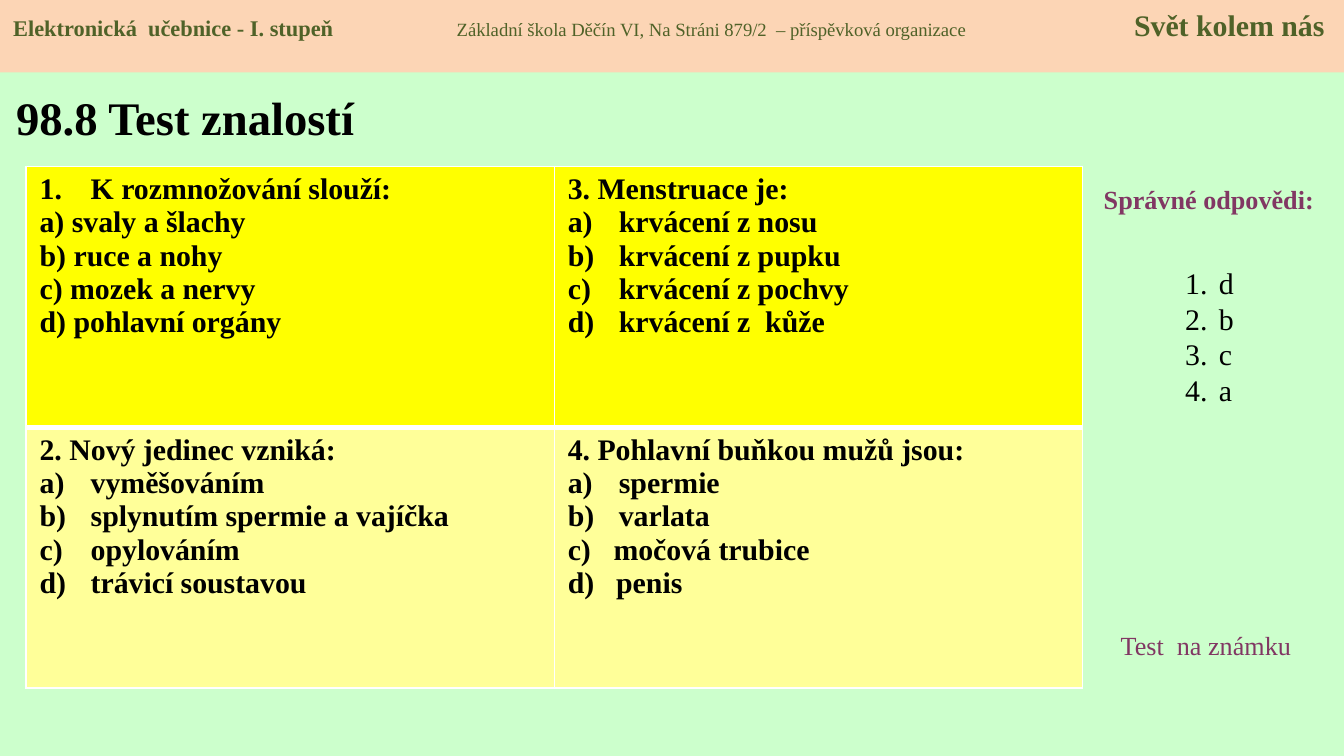
"""Builds the quiz slide "98.8 Test znalostí" with its questions and answers."""
from lxml import etree
from pptx import Presentation
from pptx import util as u
from pptx.dml.color import RGBColor
from pptx.enum import shapes, text
from pptx.oxml import ns

MINT = RGBColor(0xCC, 0xFF, 0xCC)
PEACH = RGBColor(0xFC, 0xD5, 0xB5)
OLIVE = RGBColor(0x4F, 0x62, 0x28)
PLUM = RGBColor(0x81, 0x37, 0x63)
BLACK = RGBColor(0, 0, 0)
WHITE = RGBColor(0xFF, 0xFF, 0xFF)
YELLOW = RGBColor(0xFF, 0xFF, 0)
PALE_YELLOW = RGBColor(0xFF, 0xFF, 0x99)
FONT = "Times New Roman"
LETTERS, NUMBERS = "alphaLcParenR", "arabicPeriod"

presentation = Presentation()
presentation.slide_width = u.Inches(10)
presentation.slide_height = presentation.slide_width * 9 // 16
slide = presentation.slides.add_slide(presentation.slide_layouts[5])
slide.background.fill.solid()
slide.background.fill.fore_color.rgb = MINT


def area(left, top, width, height):
    """Turns percentages of the slide into left, top, width and height."""
    across, down = presentation.slide_width / 100, presentation.slide_height / 100
    return int(left * across), int(top * down), int(width * across), int(height * down)


def write(paragraph, wording, size, color, bold=False, numbering=None, indent=0):
    """Fills and formats a paragraph, with a hanging indent if one is given."""
    paragraph.text = wording
    font = paragraph.font
    font.name, font.size, font.bold = FONT, u.Pt(size), bold
    font.color.rgb = color
    properties = paragraph._p.get_or_add_pPr()
    if indent:
        properties.set("marL", str(u.Inches(indent)))
        properties.set("indent", str(-u.Inches(indent)))
    if numbering:
        bullet = etree.Element(ns.qn("a:buAutoNum"), type=numbering)
        properties.insert(0, bullet)


title = slide.shapes.title
title.left, title.top, title.width, title.height = area(0.2, 9.7, 31.9, 11.6)
title.text_frame.vertical_anchor = text.MSO_ANCHOR.MIDDLE
write(title.text_frame.paragraphs[0], "98.8 Test znalostí", 25, BLACK, True)
title.text_frame.paragraphs[0].alignment = text.PP_ALIGN.LEFT

questions = [
    [
        [("K rozmnožování slouží:", NUMBERS, 0.38), ("a) svaly a šlachy", None, 0),
         ("b) ruce a nohy", None, 0), ("c) mozek a nervy", None, 0),
         ("d) pohlavní orgány", None, 0)],
        [("3. Menstruace je:", None, 0.38), ("krvácení z nosu", LETTERS, 0.38),
         ("krvácení z pupku", LETTERS, 0.38), ("krvácení z pochvy", LETTERS, 0.38),
         ("krvácení z  kůže", LETTERS, 0.38)],
    ],
    [
        [("2. Nový jedinec vzniká:", None, 0.38), ("vyměšováním", LETTERS, 0.38),
         ("splynutím spermie a vajíčka", LETTERS, 0.38), ("opylováním", LETTERS, 0.38),
         ("trávicí soustavou", LETTERS, 0.38)],
        [("4. Pohlavní buňkou mužů jsou:", None, 0), ("spermie", LETTERS, 0.38),
         ("varlata", LETTERS, 0.38), ("c)\tmočová trubice", None, 0.34),
         ("d)\tpenis", None, 0.36)],
    ],
]
table = slide.shapes.add_table(2, 2, *area(1.95, 22, 78.6, 69)).table
row_styles = ((YELLOW, "a:lnB"), (PALE_YELLOW, "a:lnT"))
for row, (cells, (color, inner_edge)) in enumerate(zip(questions, row_styles)):
    for column, lines in enumerate(cells):
        cell = table.cell(row, column)
        cell.fill.solid()
        cell.fill.fore_color.rgb = color
        border = etree.Element(ns.qn(inner_edge), w=str(u.Pt(3)))
        border_fill = etree.SubElement(border, ns.qn("a:solidFill"))
        etree.SubElement(border_fill, ns.qn("a:srgbClr"), val=str(WHITE))
        cell._tc.get_or_add_tcPr().insert(0, border)
        for number, (wording, numbering, indent) in enumerate(lines):
            frame = cell.text_frame
            paragraph = frame.add_paragraph() if number else frame.paragraphs[0]
            write(paragraph, wording, 16, BLACK, True, numbering, indent)

labels = [
    ("Správné odpovědi:", area(80.5, 23.4, 18.9, 6), True, text.PP_ALIGN.CENTER),
    ("Test  na známku", area(82.4, 82.4, 15.7, 6), False, text.PP_ALIGN.LEFT),
]
for wording, place, bold, alignment in labels:
    label = slide.shapes.add_textbox(*place)
    label.text_frame.word_wrap = True
    write(label.text_frame.paragraphs[0], wording, 14, PLUM, bold)
    label.text_frame.paragraphs[0].alignment = alignment

answers = slide.shapes.add_textbox(*area(87.2, 29.4, 5.5, 35.4)).text_frame
answers.word_wrap = True
answers.margin_top = u.Inches(0.32)
for number, answer in enumerate("dbca"):
    paragraph = answers.add_paragraph() if number else answers.paragraphs[0]
    write(paragraph, answer, 16, BLACK, False, NUMBERS, 0.25)
    paragraph.line_spacing = u.Pt(19)

header = slide.shapes.add_shape(shapes.MSO_SHAPE.RECTANGLE, *area(0, 0, 100, 9.6))
header.shadow.inherit = False
header.fill.solid()
header.fill.fore_color.rgb = PEACH
header.line.fill.background()
header.text_frame.vertical_anchor = text.MSO_ANCHOR.TOP
paragraph = header.text_frame.paragraphs[0]
write(paragraph, "", 12, OLIVE)
paragraph.alignment = text.PP_ALIGN.LEFT
stops = etree.Element(ns.qn("a:tabLst"))
for position in (3.3, 8.34):
    etree.SubElement(stops, ns.qn("a:tab"), pos=str(u.Inches(position)), algn="l")
paragraph._p.get_or_add_pPr().insert(0, stops)
for wording, size, bold in (
    ("Elektronická  učebnice - I. stupeň\t", 12, True),
    ("Základní škola Děčín VI, Na Stráni 879/2  – příspěvková organizace\t", 10, False),
    ("Svět kolem nás", 16, True),
):
    run = paragraph.add_run()
    run.text = wording
    run.font.size, run.font.bold = u.Pt(size), bold

presentation.save("out.pptx")
